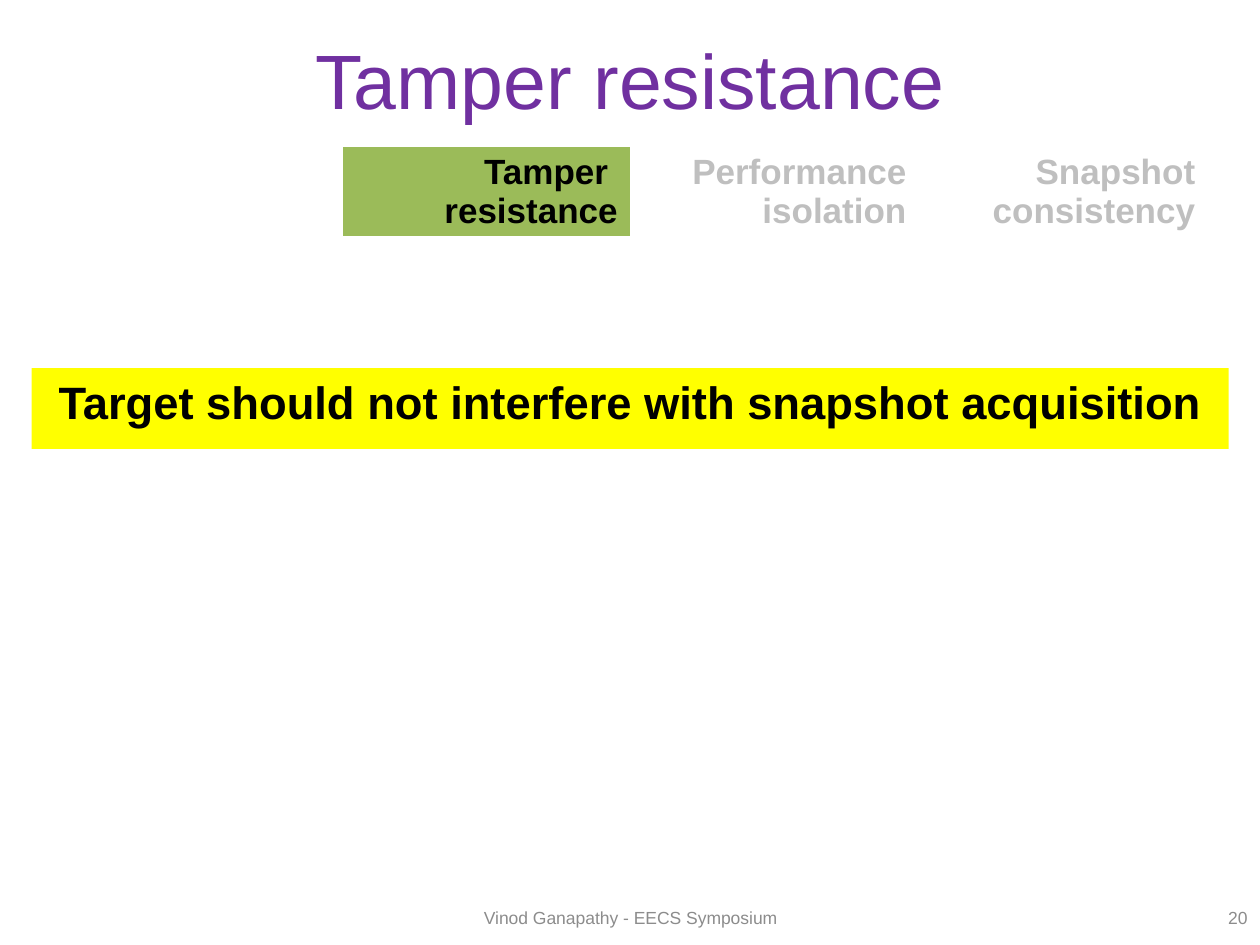
"""Build the tamper resistance slide with its topic strip and key statement."""
from dataclasses import dataclass

from pptx import Presentation
from pptx.dml.color import RGBColor
from pptx.enum import shapes, text
from pptx.util import Cm, Pt


@dataclass(frozen=True)
class Theme:
    font: str = "Arial"
    title: str = "7030A0"
    ink: str = "000000"
    faded: str = "BFBFBF"
    footer: str = "8C8C8C"
    paper: str = "FFFFFF"
    active: str = "9BBB59"
    highlight: str = "FFFF00"
    title_size: float = 44
    statement_size: float = 25.9
    topic_size: float = 20
    footer_size: float = 10


theme = Theme()
Align = text.PP_ALIGN
Anchor = text.MSO_ANCHOR


def write(frame, content, size, color, align, bold=False, anchor=Anchor.MIDDLE, before=0):
    frame.word_wrap = True
    frame.vertical_anchor = anchor
    frame.text = content
    for para in frame.paragraphs:
        para.alignment = align
        para.space_before = Pt(before)
        for span in para.runs:
            span.font.name = theme.font
            span.font.size = Pt(size)
            span.font.bold = bold
            span.font.color.rgb = RGBColor.from_string(color)


deck = Presentation()
deck.slide_width, deck.slide_height = Cm(25.4), Cm(19.05)
page = deck.slides.add_slide(deck.slide_layouts[5])

topics = [
    ("", theme.ink, theme.paper),
    ("Tamper \nresistance", theme.ink, theme.active),
    ("Performance isolation", theme.faded, theme.paper),
    ("Snapshot consistency", theme.faded, theme.paper),
]
row_heights = [Cm(1.78), Cm(1.03), Cm(1.03)]
table = page.shapes.add_table(
    len(row_heights), len(topics), Cm(1.07), Cm(2.95), Cm(23.28), sum(row_heights)
).table
for row, height in zip(table.rows, row_heights):
    row.height = height
    for cell in row.cells:
        cell.fill.solid()
        cell.fill.fore_color.rgb = RGBColor.from_string(theme.paper)
for cell, (label, color, fill) in zip(table.rows[0].cells, topics):
    cell.fill.fore_color.rgb = RGBColor.from_string(fill)
    write(cell.text_frame, label, theme.topic_size, color, Align.RIGHT,
          bold=True, anchor=Anchor.TOP)

footers = [
    ("Vinod Ganapathy - EECS Symposium", Cm(5.94), Cm(13.54), Align.CENTER),
    ("20", Cm(19.48), Cm(5.92), Align.RIGHT),
]
for label, left, width, align in footers:
    box = page.shapes.add_textbox(left, Cm(17.98), width, Cm(1.02))
    write(box.text_frame, label, theme.footer_size, theme.footer, align)

title = page.shapes.title
title.left, title.top, title.width, title.height = Cm(0.64), Cm(0), Cm(24.13), Cm(3.18)
write(title.text_frame, "Tamper resistance", theme.title_size, theme.title, Align.CENTER)

statement = page.shapes.add_shape(
    shapes.MSO_SHAPE.RECTANGLE, Cm(0.64), Cm(7.42), Cm(24.13), Cm(1.63)
)
statement.shadow.inherit = False
statement.fill.solid()
statement.fill.fore_color.rgb = RGBColor.from_string(theme.highlight)
statement.line.fill.background()
write(statement.text_frame, "Target should not interfere with snapshot acquisition",
      theme.statement_size, theme.ink, Align.CENTER, bold=True, anchor=Anchor.TOP, before=5)

deck.save("out.pptx")
